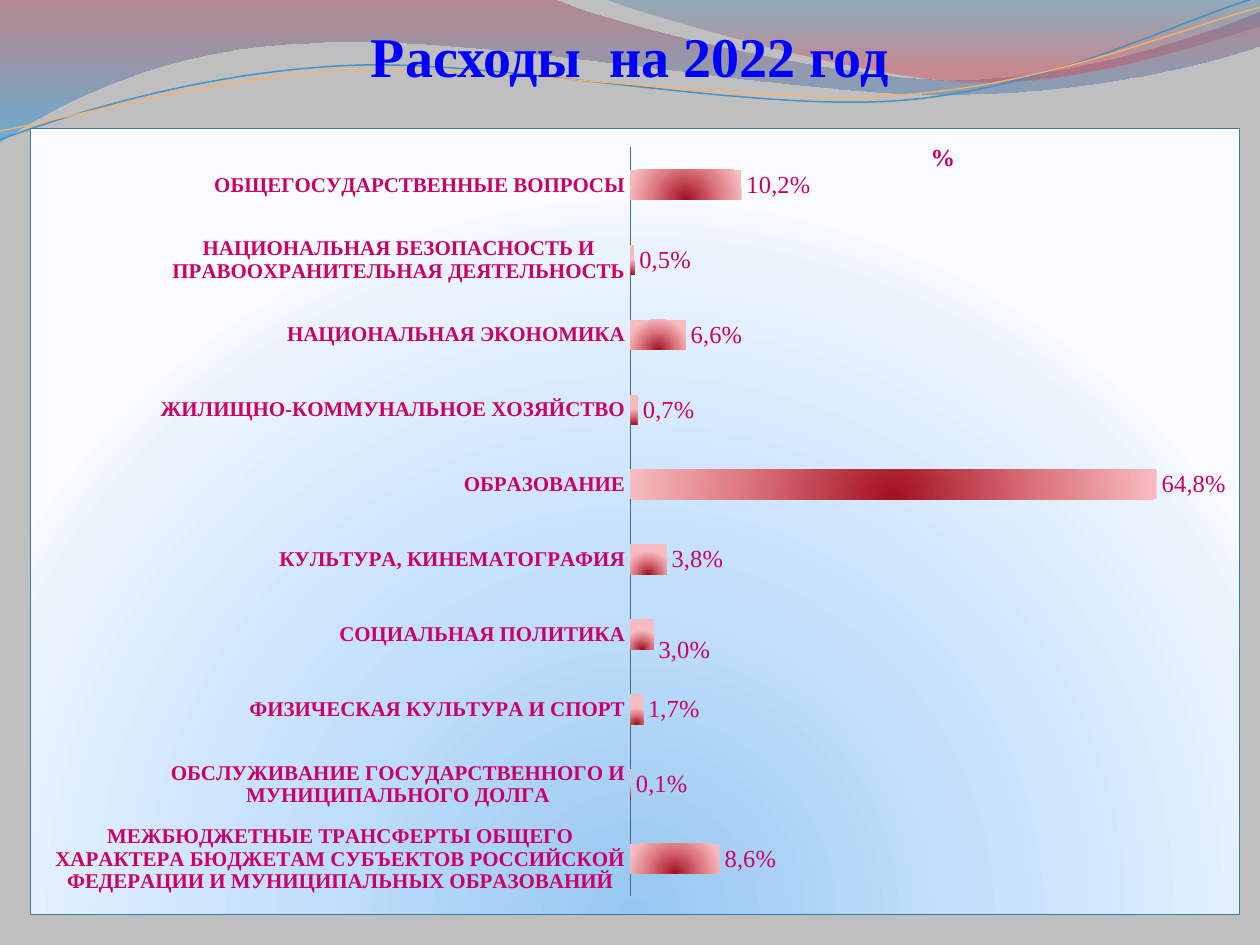
from lxml import etree
from pptx import Presentation
from pptx.chart.data import CategoryChartData
from pptx.dml.color import RGBColor
from pptx.enum.chart import XL_CHART_TYPE, XL_LABEL_POSITION, XL_TICK_LABEL_POSITION, XL_TICK_MARK
from pptx.enum.text import MSO_ANCHOR, MSO_AUTO_SIZE, PP_ALIGN
from pptx.oxml import parse_xml
from pptx.oxml.ns import qn
from pptx.util import Cm, Pt

BAR_CLUSTERED = XL_CHART_TYPE.BAR_CLUSTERED
OUTSIDE_END = XL_LABEL_POSITION.OUTSIDE_END
NEXT_TO_AXIS = XL_TICK_LABEL_POSITION.NEXT_TO_AXIS
NO_TICK = XL_TICK_MARK.NONE
BOTTOM = MSO_ANCHOR.BOTTOM
CENTER = PP_ALIGN.CENTER
NO_AUTO_SIZE = MSO_AUTO_SIZE.NONE

FONT = "Times New Roman"
GREY = RGBColor(0xBF, 0xBF, 0xBF)
BLUE = RGBColor(0x00, 0x00, 0xFF)
MAGENTA = RGBColor(0xCC, 0x00, 0x66)
BORDER = RGBColor(0x38, 0x7A, 0xA1)
AXIS = RGBColor(0x4A, 0x6A, 0x80)
LINE_BLUE = RGBColor(0x45, 0x92, 0xBF)
LINE_ORANGE = RGBColor(0xF9, 0xB2, 0x68)
LEFT_WAVE = [(0, RGBColor(0xA8, 0x47, 0x52), 45), (100, RGBColor(0x24, 0x9F, 0xE6), 55)]
RIGHT_WAVE = [(0, RGBColor(0x2A, 0x7E, 0xAF), 30), (80, RGBColor(0xD2, 0x4B, 0x5A), 45)]
PANEL = [(0, RGBColor(0x97, 0xC7, 0xEF), 100), (43, RGBColor(0xBF, 0xDE, 0xFB), 100),
         (93, RGBColor(0xEB, 0xF4, 0xFD), 100), (100, RGBColor(0xF8, 0xFB, 0xFF), 100)]
BAR = [(0, RGBColor(0xA3, 0x10, 0x22), 100), (60, RGBColor(0xE0, 0x7C, 0x84), 100),
       (100, RGBColor(0xF6, 0xBC, 0xC1), 100)]

EXPENSES = [
    ("МЕЖБЮДЖЕТНЫЕ ТРАНСФЕРТЫ ОБЩЕГО ХАРАКТЕРА БЮДЖЕТАМ СУБЪЕКТОВ РОССИЙСКОЙ ФЕДЕРАЦИИ "
     "И МУНИЦИПАЛЬНЫХ ОБРАЗОВАНИЙ", 0.103, "8,6%"),
    ("ОБСЛУЖИВАНИЕ ГОСУДАРСТВЕННОГО И МУНИЦИПАЛЬНОГО ДОЛГА", 0.001, "0,1%"),
    ("ФИЗИЧЕСКАЯ КУЛЬТУРА И СПОРТ", 0.015, "1,7%"),
    ("СОЦИАЛЬНАЯ ПОЛИТИКА", 0.027, "3,0%"),
    ("КУЛЬТУРА, КИНЕМАТОГРАФИЯ", 0.042, "3,8%"),
    ("ОБРАЗОВАНИЕ", 0.605, "64,8%"),
    ("ЖИЛИЩНО-КОММУНАЛЬНОЕ ХОЗЯЙСТВО", 0.009, "0,7%"),
    ("НАЦИОНАЛЬНАЯ ЭКОНОМИКА", 0.064, "6,6%"),
    ("НАЦИОНАЛЬНАЯ БЕЗОПАСНОСТЬ И ПРАВООХРАНИТЕЛЬНАЯ ДЕЯТЕЛЬНОСТЬ", 0.005, "0,5%"),
    ("ОБЩЕГОСУДАРСТВЕННЫЕ ВОПРОСЫ", 0.128, "10,2%"),
]
LOWERED_LABEL = 3

LEFT_OUTLINE = [
    [(0, 0)],
    [(11.18, -0.03)],
    [(12.09, 0.43), (16.87, 1.6), (19.25, 1.6)],
    [(21.67, 1.6), (24.33, 0.66), (25.4, 0.23)],
    [(25.43, 0.91)],
    [(24.97, 1.12), (22.1, 1.93), (18.95, 1.91)],
    [(15.8, 1.91), (9.7, 0.71), (6.53, 0.86)],
    [(3.28, 0.91), (1.17, 2.11), (-0.03, 2.87)],
    [(0, 0)],
]
RIGHT_OUTLINE = [
    [(12.17, -0.03)],
    [(12.93, 0.28), (17.32, 1.57), (19.53, 1.65)],
    [(21.74, 1.75), (24.41, 0.81), (25.4, 0.53)],
    [(25.4, 0)],
    [(12.17, -0.03)],
]
BLUE_CURVE = [
    [(0, 2.82)],
    [(1.22, 2.36), (4.01, 1.45), (7.04, 1.32)],
    [(10.03, 1.19), (15.06, 2.26), (18.11, 2.03)],
    [(21.16, 1.8), (23.83, 0.38), (25.35, -0.05)],
]
ORANGE_CURVE = [
    [(0, 2.64)],
    [(1.19, 2.44), (4.17, 1.55), (7.19, 1.42)],
    [(10.24, 1.3), (15.16, 2.13), (18.21, 1.91)],
    [(21.23, 1.7), (23.9, 0.53), (25.4, 0.15)],
]


def gradient(stops, radial):
    """Return a gradient fill element, radial from below or running downwards."""
    fill = etree.Element(qn("a:gradFill"), rotWithShape="1")
    stop_list = etree.SubElement(fill, qn("a:gsLst"))
    for position, color, opacity in stops:
        stop = etree.SubElement(stop_list, qn("a:gs"), pos=str(position * 1000))
        value = etree.SubElement(stop, qn("a:srgbClr"), val=str(color))
        if opacity < 100:
            etree.SubElement(value, qn("a:alpha"), val=str(opacity * 1000))
    if radial:
        direction = etree.SubElement(fill, qn("a:path"), path="circle")
        etree.SubElement(direction, qn("a:fillToRect"), l="50000", t="130000", r="50000", b="-30000")
    else:
        etree.SubElement(fill, qn("a:lin"), ang="5400000", scaled="0")
    return fill


def set_gradient(fill, properties, stops, radial=False):
    """Replace the fill held in the given shape properties by a gradient."""
    fill.solid()
    solid = properties.find(qn("a:solidFill"))
    properties.replace(solid, gradient(stops, radial))


def set_layout(element, index, **values):
    """Give a chart element a manual layout as its child at the index."""
    for old in element.findall(qn("c:layout")):
        element.remove(old)
    layout = etree.Element(qn("c:layout"))
    manual = etree.SubElement(layout, qn("c:manualLayout"))
    for name, value in values.items():
        etree.SubElement(manual, qn("c:" + name), val=str(value))
    element.insert(index, layout)


def add_outline(slide, segments, left, top, closed):
    """Draw one freeform whose three-point segments are cubic curves."""
    placed = [[(left + Cm(x), top + Cm(y)) for x, y in segment] for segment in segments]
    builder = slide.shapes.build_freeform(*placed[0][-1])
    builder.add_line_segments([segment[-1] for segment in placed[1:]], close=closed)
    shape = builder.convert_to_shape()
    shape.shadow.inherit = False
    lines = list(shape._element.iter(qn("a:lnTo")))
    for line, segment in zip(lines, placed[1:]):
        if len(segment) == 3:
            curve = etree.Element(qn("a:cubicBezTo"))
            for x, y in segment:
                etree.SubElement(curve, qn("a:pt"), x=str(x - shape.left), y=str(y - shape.top))
            line.getparent().replace(line, curve)
    return shape


def add_waves(slide, left, top):
    """Draw the waves and curves along the upper edge."""
    for segments, stops in ((LEFT_OUTLINE, LEFT_WAVE), (RIGHT_OUTLINE, RIGHT_WAVE)):
        wave = add_outline(slide, segments, left, top, True)
        wave.line.fill.background()
        set_gradient(wave.fill, wave._element.spPr, stops)
    for segments, color, width in ((BLUE_CURVE, LINE_BLUE, 0.85), (ORANGE_CURVE, LINE_ORANGE, 0.75)):
        curve = add_outline(slide, segments, left, top, False)
        curve.fill.background()
        curve.line.color.rgb = color
        curve.line.width = Pt(width)


def style_font(font, size, color, bold):
    """Set the face, size, colour and weight of a font."""
    font.name, font.size, font.bold = FONT, Pt(size), bold
    font.color.rgb = color


def place_title(slide, left, top, width, height):
    """Move and format the title placeholder in front of the waves."""
    title = slide.shapes.title
    title.left, title.top, title.width, title.height = left, top, width, height
    frame = title.text_frame
    frame.text = "Расходы  на 2022 год"
    frame.auto_size = NO_AUTO_SIZE
    frame.vertical_anchor = BOTTOM
    frame.margin_left = frame.margin_right = frame.margin_bottom = 0
    paragraph = frame.paragraphs[0]
    paragraph.alignment = CENTER
    style_font(paragraph.runs[0].font, 32, BLUE, True)
    slide.shapes._spTree.append(title._element)


def style_panel(chart):
    """Fill and border the chart area."""
    space = chart._chartSpace
    properties = parse_xml(
        '<c:spPr xmlns:c="http://schemas.openxmlformats.org/drawingml/2006/chart" '
        'xmlns:a="http://schemas.openxmlformats.org/drawingml/2006/main">'
        f'<a:ln w="{Pt(0.75)}"><a:solidFill><a:srgbClr val="{BORDER}"/></a:solidFill></a:ln></c:spPr>')
    properties.insert(0, gradient(PANEL, True))
    space.find(qn("c:chart")).addnext(properties)


def style_bars(plot):
    """Format the bars and write their labels."""
    plot.gap_width, plot.overlap, plot.vary_by_categories = 150, -25, False
    series = plot.series[0]
    set_gradient(series.format.fill, series._element.find(qn("c:spPr")), BAR, True)
    labels = series.data_labels
    labels.show_value = True
    labels.number_format, labels.number_format_is_linked = "0.0%", False
    labels.position = OUTSIDE_END
    style_font(labels.font, 14, MAGENTA, False)
    for index, (_, _, text) in enumerate(EXPENSES):
        label = series.points[index].data_label
        label.text_frame.text = text
        style_font(label.text_frame.paragraphs[0].runs[0].font, 14, MAGENTA, False)
        label.position = OUTSIDE_END
        if index == LOWERED_LABEL:
            set_layout(label._dLbl, 1, x=0, y=0.02)


def add_expense_chart(slide, left, top, width, height):
    """Add the bar chart of expenses by purpose."""
    data = CategoryChartData(number_format="0.0%")
    data.categories = [name for name, _, _ in EXPENSES]
    data.add_series("%", [value for _, value, _ in EXPENSES])
    chart = slide.shapes.add_chart(BAR_CLUSTERED, left, top, width, height, data).chart
    style_font(chart.font, 12, MAGENTA, True)
    chart.has_legend = False
    style_panel(chart)
    title = chart.chart_title
    title.text_frame.text = "%"
    style_font(title.text_frame.paragraphs[0].runs[0].font, 14, MAGENTA, True)
    set_layout(title._element, 1, xMode="edge", yMode="edge", x=0.741, y=0.011)
    title.include_in_layout = True
    set_layout(chart._chartSpace.chart.plotArea, 0, layoutTarget="inner", xMode="edge",
               yMode="edge", x=0.496, y=0.024, w=0.504, h=0.953)
    values = chart.value_axis
    values.minimum_scale, values.maximum_scale = 0, 0.7
    values.has_major_gridlines, values.visible = False, False
    categories = chart.category_axis
    categories.major_tick_mark = categories.minor_tick_mark = NO_TICK
    categories.tick_label_position = NEXT_TO_AXIS
    categories.format.line.color.rgb = AXIS
    categories.format.line.width = Pt(0.5)
    style_font(categories.tick_labels.font, 12, MAGENTA, True)
    style_bars(chart.plots[0])


def main():
    """Build the slide and save it."""
    presentation = Presentation()
    presentation.slide_width, presentation.slide_height = Cm(25.4), Cm(19.05)
    slide = presentation.slides.add_slide(presentation.slide_layouts[5])
    slide.background.fill.solid()
    slide.background.fill.fore_color.rgb = GREY
    add_waves(slide, Cm(0), Cm(0))
    place_title(slide, Cm(0), Cm(0.6), Cm(25.4), Cm(1.19))
    add_expense_chart(slide, Cm(0.6), Cm(2.58), Cm(24.4), Cm(15.87))
    presentation.save("out.pptx")


if __name__ == "__main__":
    main()
